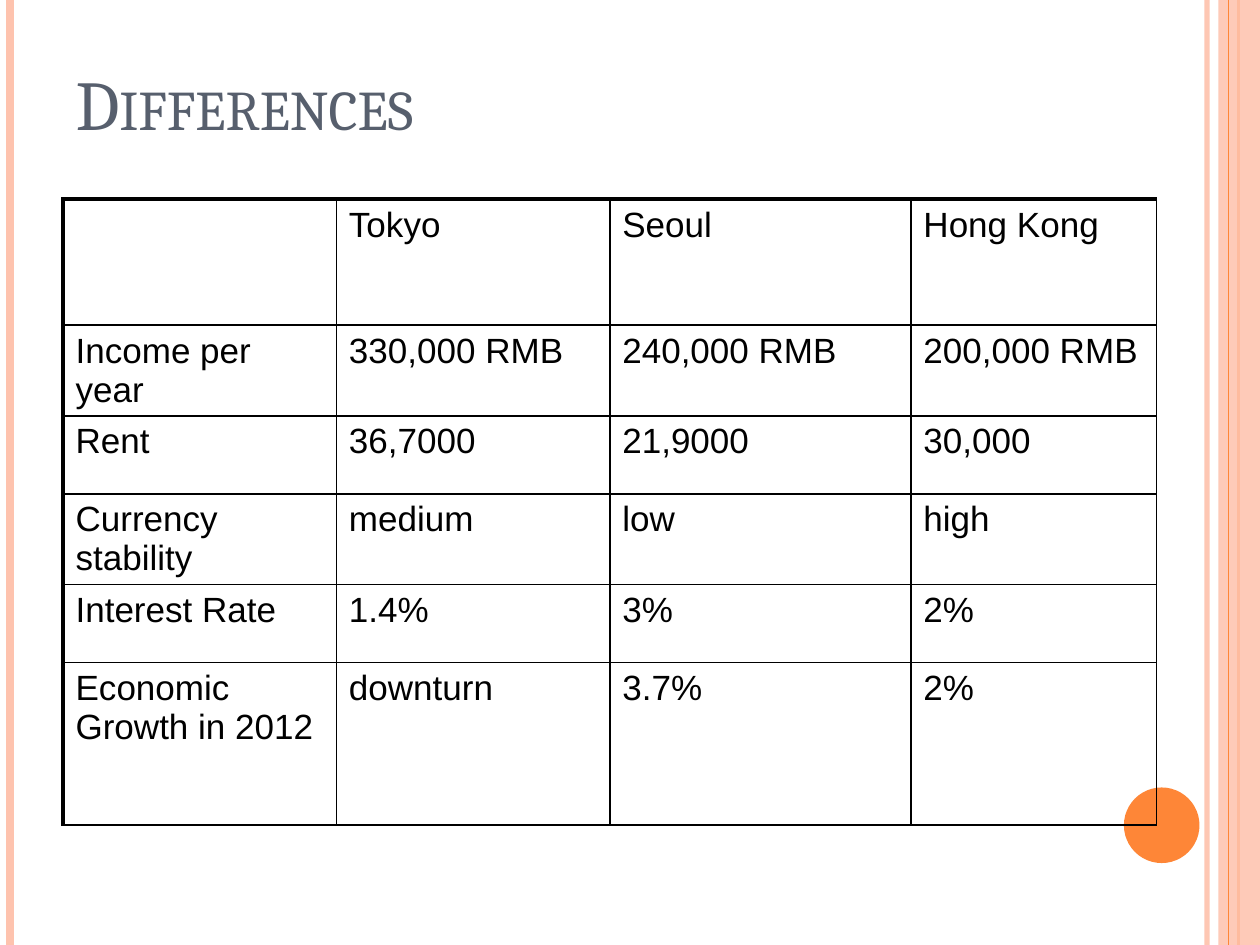
from lxml.etree import SubElement
from pptx import Presentation
from pptx.dml.color import RGBColor
from pptx.enum.shapes import MSO_CONNECTOR as CONN, MSO_SHAPE as SHAPE
from pptx.enum.text import MSO_ANCHOR as ANCHOR, PP_ALIGN as ALIGN
from pptx.oxml.ns import qn
from pptx.util import Inches, Pt

# Content
TITLE = "Differences"
ROWS = [
    ("", "Tokyo", "Seoul", "Hong Kong"),
    ("Income per year", "330,000 RMB", "240,000 RMB", "200,000 RMB"),
    ("Rent", "36,7000", "21,9000", "30,000"),
    ("Currency stability", "medium", "low", "high"),
    ("Interest Rate", "1.4%", "3%", "2%"),
    ("Economic Growth in 2012", "downturn", "3.7%", "2%"),
]
COL_WIDTHS = (2.17, 2.17, 2.39, 1.95)
ROW_HEIGHTS = (1, 0.62, 0.62, 0.62, 0.62, 1.29)
PEACH, ORANGE, SLATE, BLACK = "FEC3AE", "FE8637", "575F6D", "000000"
W, H = 10, 7.5
# x, colour, width in points, opacity in percent
BACK_STRIPES = [(9.58, PEACH, 3, 93), (0.08, PEACH, 4.5, 100), (9.83, ORANGE, 1.5, 100)]
FRONT_STRIPES = [(9.75, ORANGE, 0.75, 100)]


def rgb(hex_color):
    return RGBColor.from_string(hex_color)


def set_font(font, **values):
    font.color.rgb = rgb(values.pop("color"))
    for name, value in values.items():
        setattr(font, name, value)


def set_fill(fill, color, opacity=100):
    fill.solid()
    fill.fore_color.rgb = rgb(color)
    if opacity < 100:
        clr = fill._xPr.find(".//" + qn("a:srgbClr"))
        SubElement(clr, qn("a:alpha"), val=str(opacity * 1000))


def add_stripe(x, color, width, opacity):
    line = s.shapes.add_connector(CONN.STRAIGHT, Inches(x), 0, Inches(x), Inches(H))
    line.line.width = Pt(width)
    set_fill(line.line.fill, color, opacity)
    SubElement(line._element.spPr, qn("a:effectLst"))


def add_plain(kind, x, y, w, h, color, opacity=100):
    sp = s.shapes.add_shape(kind, *map(Inches, (x, y, w, h)))
    sp.shadow.inherit = False
    sp.line.fill.background()
    set_fill(sp.fill, color, opacity)


def set_borders(cell, **widths):
    tcPr = cell._tc.get_or_add_tcPr()
    for side, width in widths.items():
        ln = SubElement(tcPr, qn("a:ln" + side), w=str(Pt(width)))
        SubElement(SubElement(ln, qn("a:solidFill")), qn("a:srgbClr"), val=BLACK)


prs = Presentation()
prs.slide_width, prs.slide_height = Inches(W), Inches(H)
s = prs.slides.add_slide(prs.slide_layouts[5])

# Side stripes and disc
for stripe in BACK_STRIPES:
    add_stripe(*stripe)
add_plain(SHAPE.RECTANGLE, 9.67, 0, 0.33, H, PEACH, 87)
for stripe in FRONT_STRIPES:
    add_stripe(*stripe)
add_plain(SHAPE.OVAL, 8.92, 6.25, 0.6, 0.6, ORANGE)

# Title
title = s.shapes.title
title.left, title.top, title.width, title.height = map(Inches, (0.5, 0.3, 9, 0.9))
tf = title.text_frame
tf.text = TITLE
tf.vertical_anchor = ANCHOR.BOTTOM
p = tf.paragraphs[0]
p.alignment = ALIGN.LEFT
r = p.runs[0]
set_font(r.font, name="Cambria", size=Pt(40), color=SLATE)
r.font._element.set("cap", "small")

# Table
frame = s.shapes.add_table(len(ROWS), len(COL_WIDTHS), Inches(0.5), Inches(1.58),
                           Inches(sum(COL_WIDTHS)), Inches(sum(ROW_HEIGHTS)))
table = frame.table
table.first_row = table.horz_banding = False
for col, width in zip(table.columns, COL_WIDTHS):
    col.width = Inches(width)
for i, (row, height) in enumerate(zip(ROWS, ROW_HEIGHTS)):
    table.rows[i].height = Inches(height)
    for j, text in enumerate(row):
        cell = table.cell(i, j)
        cell.text = text
        p = cell.text_frame.paragraphs[0]
        p.space_before = Pt(4)
        set_font(p.font, size=Pt(20), color=BLACK)
        for r in p.runs:
            set_font(r.font, name="Arial", size=Pt(20), bold=False, color=BLACK)
        set_borders(cell, L=1 if j else 2.25, R=1, T=1 if i else 2.25, B=1)
        cell.fill.background()

prs.save("out.pptx")
